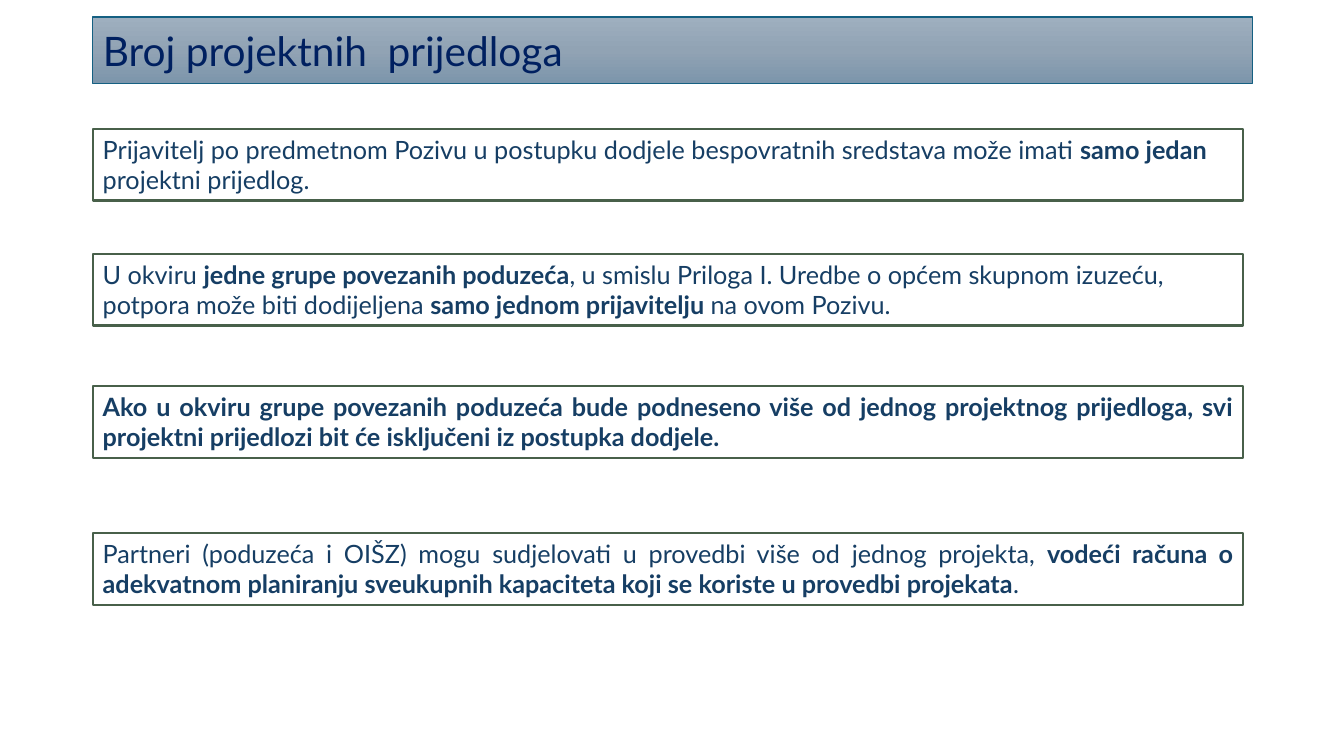
from copy import deepcopy

from pptx import Presentation, util as u
from pptx.dml.color import RGBColor
from pptx.enum import shapes, text

WIDE, HIGH = 13.33, 7.5
LEFT = 0.92
FONT = "Lato"
NAVY, BLUE, GREEN, TEAL = "002060", "163E64", "48604A", "156082"
SHADES = ("9EAFBF", "91A3B4", "7C95AB")
TITLE = "Broj projektnih  prijedloga"

# Each rule: top, alignment, then (words, bold) runs
ALIGN = text.PP_ALIGN
RULES = [
    (1.28, ALIGN.LEFT, [
        ("Prijavitelj po predmetnom Pozivu u postupku dodjele bespovratnih "
         "sredstava može imati ", False),
        ("samo jedan ", True),
        ("projektni prijedlog.", False)]),
    (2.52, ALIGN.LEFT, [
        ("U okviru ", False),
        ("jedne grupe povezanih poduzeća", True),
        (", u smislu Priloga I. Uredbe o općem skupnom izuzeću, "
         "potpora može biti dodijeljena ", False),
        ("samo jednom prijavitelju ", True),
        ("na ovom Pozivu.", False)]),
    (3.83, ALIGN.JUSTIFY, [
        ("Ako u okviru grupe povezanih poduzeća bude podneseno više od jednog "
         "projektnog prijedloga, svi projektni prijedlozi bit će isključeni "
         "iz postupka dodjele.", True)]),
    (5.29, ALIGN.JUSTIFY, [
        ("Partneri (poduzeća i OIŠZ) mogu sudjelovati u provedbi više od "
         "jednog projekta, ", False),
        ("vodeći računa o adekvatnom planiranju sveukupnih kapaciteta koji "
         "se koriste u provedbi projekata", True),
        (".", False)]),
]


def color(code):
    return RGBColor.from_string(code)


def style(run, size, code, bold=False):
    run.font.name = FONT
    run.font.size = u.Pt(size)
    run.font.bold = bold
    run.font.color.rgb = color(code)


def edge(shape, code, width):
    shape.line.color.rgb = color(code)
    shape.line.width = u.Pt(width)


def shade(shape):
    # Three even stops, running from top to bottom
    shape.fill.gradient()
    shape.fill.gradient_angle = 270
    stops = shape._element.xpath(".//a:gsLst/a:gs")
    stops[0].addnext(deepcopy(stops[0]))
    for i, (stop, code) in enumerate(zip(shape.fill.gradient_stops, SHADES)):
        stop.position = i / (len(SHADES) - 1)
        stop.color.rgb = color(code)


def head(slide):
    bar = slide.shapes.title
    bar.left, bar.top = u.Inches(LEFT), u.Inches(0.17)
    bar.width, bar.height = u.Inches(11.5), u.Inches(0.66)
    shade(bar)
    edge(bar, TEAL, 1)
    frame = bar.text_frame
    frame.text = TITLE
    frame.word_wrap = True
    frame.auto_size = text.MSO_AUTO_SIZE.NONE
    frame.vertical_anchor = text.MSO_ANCHOR.MIDDLE
    frame.paragraphs[0].alignment = ALIGN.LEFT
    style(frame.paragraphs[0].runs[0], 29, NAVY)


def rule(slide, top, align, parts):
    box = slide.shapes.add_shape(
        shapes.MSO_SHAPE.RECTANGLE, u.Inches(LEFT), u.Inches(top),
        u.Inches(11.41), u.Inches(0.71))
    box.shadow.inherit = False
    box.fill.solid()
    box.fill.fore_color.rgb = color("FFFFFF")
    edge(box, GREEN, 1.5)
    frame = box.text_frame
    frame.word_wrap = True
    frame.auto_size = text.MSO_AUTO_SIZE.SHAPE_TO_FIT_TEXT
    frame.vertical_anchor = text.MSO_ANCHOR.TOP
    para = frame.paragraphs[0]
    para.alignment = align
    for words, bold in parts:
        run = para.add_run()
        run.text = words
        style(run, 18, BLUE, bold)


def main():
    deck = Presentation()
    deck.slide_width, deck.slide_height = u.Inches(WIDE), u.Inches(HIGH)
    slide = deck.slides.add_slide(deck.slide_layouts.get_by_name("Title Only"))
    # Title bar, then the framed rules
    head(slide)
    for top, align, parts in RULES:
        rule(slide, top, align, parts)
    deck.save("out.pptx")


if __name__ == "__main__":
    main()
